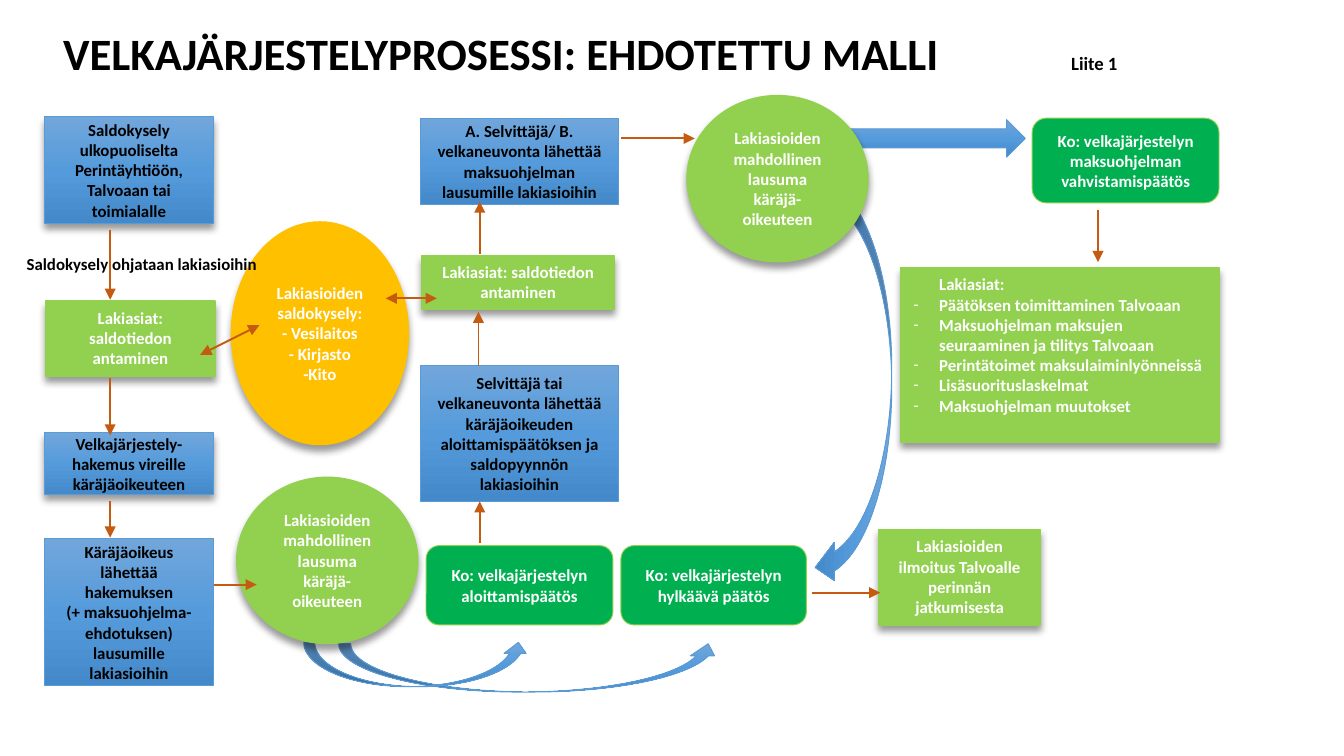
from copy import deepcopy
from lxml import etree
from pptx import Presentation
from pptx.dml.color import RGBColor
from pptx.enum.shapes import MSO_CONNECTOR, MSO_SHAPE
from pptx.enum.text import MSO_ANCHOR, PP_ALIGN
from pptx.oxml.ns import qn
from pptx.util import Inches, Pt

RECTANGLE = MSO_SHAPE.RECTANGLE
ROUNDED = MSO_SHAPE.ROUNDED_RECTANGLE
ELLIPSE = MSO_SHAPE.OVAL
RIGHT_ARROW = MSO_SHAPE.RIGHT_ARROW
CURVED_UP = MSO_SHAPE.CURVED_UP_ARROW
CURVED_DOWN = MSO_SHAPE.CURVED_DOWN_ARROW
STRAIGHT = MSO_CONNECTOR.STRAIGHT
TOP, MIDDLE, BOTTOM = MSO_ANCHOR.TOP, MSO_ANCHOR.MIDDLE, MSO_ANCHOR.BOTTOM
LEFT, CENTER = PP_ALIGN.LEFT, PP_ALIGN.CENTER

BLACK = RGBColor(0x00, 0x00, 0x00)
WHITE = RGBColor(0xFF, 0xFF, 0xFF)
BLUE_LINE = RGBColor(0x5B, 0x9B, 0xD5)
LIGHT_GREEN = RGBColor(0x92, 0xD0, 0x50)
GREEN = RGBColor(0x00, 0xB0, 0x50)
YELLOW = RGBColor(0xFF, 0xC0, 0x00)
ORANGE = RGBColor(0xC5, 0x5A, 0x11)
GRADIENT = [
    (0, RGBColor(0x71, 0xA6, 0xDB)),
    (0.5, RGBColor(0x55, 0x9B, 0xDB)),
    (1, RGBColor(0x44, 0x8A, 0xCA)),
]

presentation = Presentation()
presentation.slide_width = Inches(10)
presentation.slide_height = presentation.slide_width * 9 // 16
slide = presentation.slides.add_slide(presentation.slide_layouts[6])
COLUMN = ROW = presentation.slide_width / 100


def place(left, top, width, height):
    return [round(left * COLUMN), round(top * ROW), round(width * COLUMN), round(height * ROW)]


def add_run(paragraph, text, color, size=9):
    run = paragraph.add_run()
    run.text = text
    run.font.name = "Calibri"
    run.font.size = Pt(size)
    run.font.bold = True
    run.font.color.rgb = color


title = slide.shapes.add_textbox(*place(4.7, -5.7, 86.1, 11.7))
title_frame = title.text_frame
title_frame.word_wrap = True
title_frame.vertical_anchor = BOTTOM
title_frame.margin_left = title_frame.margin_top = title_frame.margin_bottom = 0
paragraph = title_frame.paragraphs[0]
paragraph.line_spacing = 0.9
tabs = etree.SubElement(paragraph._p.get_or_add_pPr(), qn("a:tabLst"))
for position in (67.5, 75):
    etree.SubElement(tabs, qn("a:tab"), pos=str(round(position * COLUMN)), algn="l")
add_run(paragraph, "VELKAJÄRJESTELYPROSESSI: EHDOTETTU MALLI\t\t", BLACK, 24)
add_run(paragraph, "Liite 1", BLACK, 10)

STATEMENT = ["Lakiasioiden mahdollinen lausuma käräjä-oikeuteen"]
BALANCE = ["Lakiasiat: saldotiedon antaminen"]
DUTIES = [
    "Lakiasiat:",
    "Päätöksen toimittaminen Talvoaan",
    "Maksuohjelman maksujen seuraaminen ja tilitys Talvoaan",
    "Perintätoimet maksulaiminlyönneissä",
    "Lisäsuorituslaskelmat",
    "Maksuohjelman muutokset",
]

steps = [
    (RIGHT_ARROW, None, False, (61.3, 8.9, 15, 2.8), []),
    (RECTANGLE, None, True, (3.3, 8.7, 12.6, 7.9),
     ["Saldokysely ulkopuoliselta", "Perintäyhtiöön, Talvoaan tai toimialalle"]),
    (RECTANGLE, LIGHT_GREEN, True, (3.4, 22.4, 12.6, 5.6), BALANCE),
    (RECTANGLE, None, False, (3.3, 40.1, 12.6, 10.9),
     ["Käräjäoikeus lähettää hakemuksen", "(+ maksuohjelma-ehdotuksen) lausumille lakiasioihin"]),
    (ELLIPSE, YELLOW, True, (17.2, 16.5, 13.2, 16.6),
     ["Lakiasioiden saldokysely:", "- Vesilaitos", "- Kirjasto", "-Kito"]),
    (RECTANGLE, None, False, (31.3, 27.2, 14.7, 10.1),
     ["Selvittäjä tai velkaneuvonta lähettää käräjäoikeuden aloittamispäätöksen ja saldopyynnön lakiasioihin"]),
    (CURVED_UP, None, False, (25.2, 47.9, 28.4, 3.6), []),
    (CURVED_UP, None, False, (22.6, 47.8, 16.8, 3.3), []),
    (RECTANGLE, LIGHT_GREEN, True, (67, 19.9, 23.7, 13), DUTIES),
    (RECTANGLE, None, False, (31.3, 8.8, 14.7, 6.4),
     ["A. Selvittäjä/ B. velkaneuvonta lähettää maksuohjelman lausumille lakiasioihin"]),
    (CURVED_DOWN, None, False, (48.3, 25.6, 30.4, 5.7), []),
    (ROUNDED, GREEN, False, (31.7, 40.6, 13.9, 5.9), ["Ko: velkajärjestelyn aloittamispäätös"]),
    (ROUNDED, GREEN, False, (46.2, 40.6, 13.8, 5.9), ["Ko: velkajärjestelyn hylkäävä päätös"]),
    (RECTANGLE, LIGHT_GREEN, True, (65.4, 39.4, 12, 7.1),
     ["Lakiasioiden ilmoitus Talvoalle perinnän jatkumisesta"]),
    (RECTANGLE, None, True, (3.3, 32.2, 12.6, 4.6), ["Velkajärjestely-hakemus vireille käräjäoikeuteen"]),
    (ROUNDED, GREEN, False, (76.8, 8.8, 13.9, 6.3), ["Ko: velkajärjestelyn maksuohjelman vahvistamispäätös"]),
    (ELLIPSE, LIGHT_GREEN, True, (51.1, 7.1, 13.5, 12.4), STATEMENT),
    (RECTANGLE, LIGHT_GREEN, True, (31.4, 19, 14.3, 4), BALANCE),
    (ELLIPSE, LIGHT_GREEN, True, (17.6, 35.5, 13.5, 12.4), STATEMENT),
]
for kind, fill, shadow, bounds, lines in steps:
    shape = slide.shapes.add_shape(kind, *place(*bounds))
    shape.shadow.inherit = False
    properties = shape._element.spPr
    if kind == CURVED_DOWN:
        shape.rotation = 90
    if fill is None:
        shape.fill.gradient()
        shape.fill.gradient_angle = 270
        stops = properties.find(qn("a:gradFill")).find(qn("a:gsLst"))
        stops.append(deepcopy(stops[0]))
        for stop, (position, color) in zip(shape.fill.gradient_stops, GRADIENT):
            stop.position = position
            stop.color.rgb = color
    else:
        shape.fill.solid()
        shape.fill.fore_color.rgb = fill
    shape.line.color.rgb = BLUE_LINE if fill is None else YELLOW if fill == YELLOW else LIGHT_GREEN
    grows = kind == RECTANGLE and fill is not None
    shape.line.width = Pt(0.75 if grows else 0.5)
    if shadow:
        outer = etree.SubElement(properties.find(qn("a:effectLst")), qn("a:outerShdw"),
                                 blurRad=str(Pt(4)), dist=str(Pt(3)), dir="5400000", rotWithShape="0")
        shadow_color = etree.SubElement(outer, qn("a:srgbClr"), val=str(BLACK))
        etree.SubElement(shadow_color, qn("a:alpha"), val="40000")
    frame = shape.text_frame
    frame.word_wrap = True
    frame.vertical_anchor = TOP if grows else MIDDLE
    for index, line in enumerate(lines):
        paragraph = frame.add_paragraph() if index else frame.paragraphs[0]
        paragraph.alignment = LEFT if lines is DUTIES else CENTER
        if lines is DUTIES:
            indent = round(1.9 * COLUMN)
            layout = paragraph._p.get_or_add_pPr()
            layout.set("marL", str(indent))
            layout.set("indent", str(-indent if index else 0))
            if index:
                etree.SubElement(layout, qn("a:buFont"), typeface="Calibri")
                etree.SubElement(layout, qn("a:buChar"), char="-")
        add_run(paragraph, line, BLACK if fill is None else WHITE)

arrows = [
    (8.2, 17.1, 8.2, 22.3, False),
    (8.2, 28.1, 8.2, 32.4, False),
    (8.2, 37.3, 8.2, 40, False),
    (15.9, 43.5, 19.1, 43.5, False),
    (14.9, 26.4, 19.3, 24.2, True),
    (28.7, 22.2, 32.5, 22.2, True),
    (35.7, 40.4, 35.7, 37.3, False),
    (35.6, 27.2, 35.6, 23.2, False),
    (35.7, 18.9, 35.7, 15, False),
    (46.2, 10.3, 51.7, 10.3, False),
    (81.7, 15.6, 81.7, 19.5, False),
    (60.4, 44.1, 65.5, 44.1, False),
]
for start_x, start_y, end_x, end_y, two_way in arrows:
    arrow = slide.shapes.add_connector(STRAIGHT, *place(start_x, start_y, end_x, end_y))
    arrow.line.color.rgb = ORANGE
    arrow.line.width = Pt(1)
    properties = arrow._element.spPr
    outline = properties.find(qn("a:ln"))
    if two_way:
        etree.SubElement(outline, qn("a:headEnd"), type="triangle")
    etree.SubElement(outline, qn("a:tailEnd"), type="triangle")
    etree.SubElement(properties, qn("a:effectLst"))

caption = slide.shapes.add_textbox(*place(1, 18.4, 19.5, 2.5))
caption.text_frame.word_wrap = False
add_run(caption.text_frame.paragraphs[0], "Saldokysely ohjataan lakiasioihin", BLACK)

presentation.save("out.pptx")
